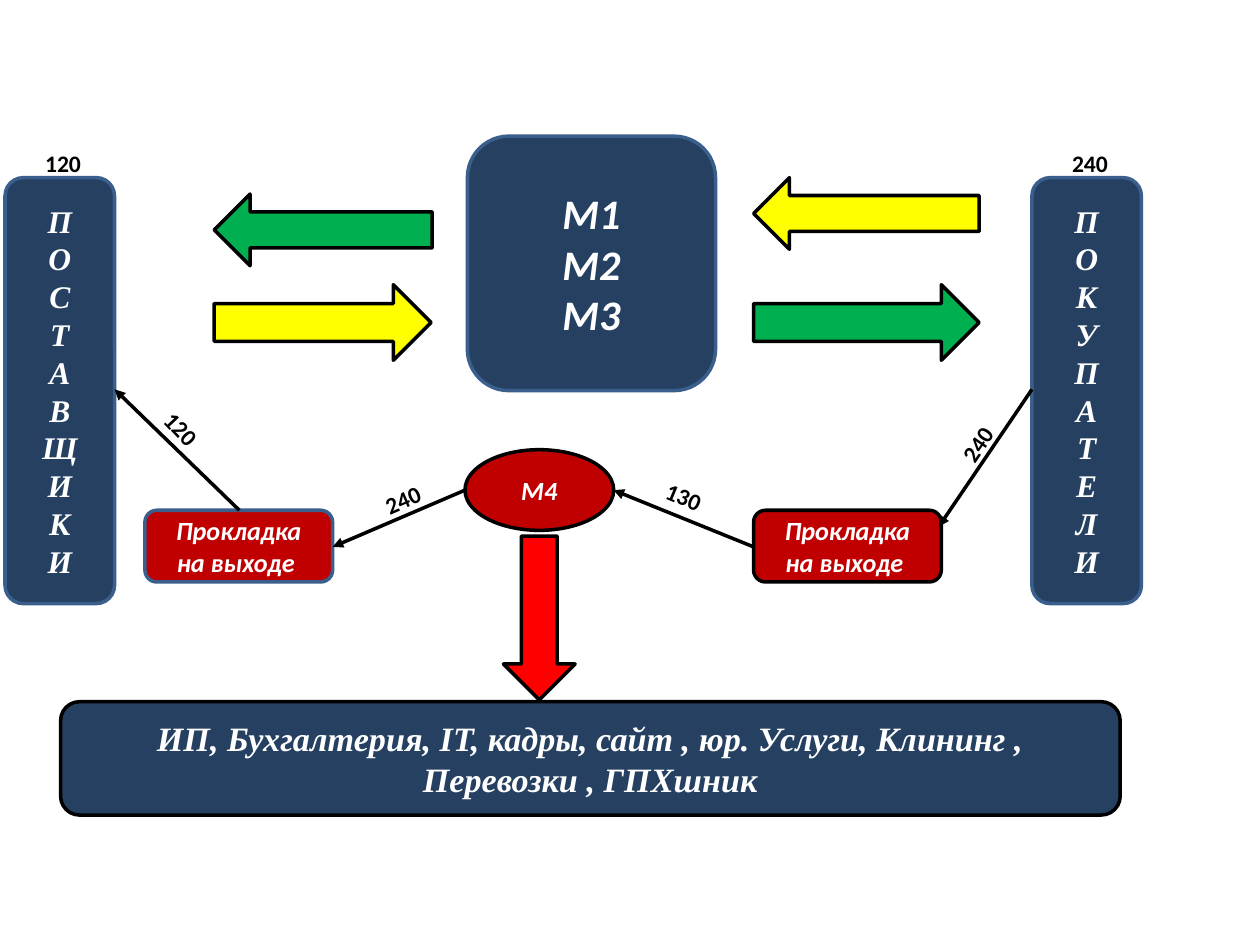
from lxml import etree
from pptx import Presentation
from pptx import util as u
from pptx.dml.color import RGBColor
from pptx.enum import shapes, text
from pptx.oxml.ns import qn

Pt = u.Pt
KIND = shapes.MSO_SHAPE
ROUND, LEFT, RIGHT = KIND.ROUNDED_RECTANGLE, KIND.LEFT_ARROW, KIND.RIGHT_ARROW
NAVY, EDGE, BLACK, WHITE = "254061", "3A5F8C", "000000", "FFFFFF"
CRIMSON, RED, GREEN, YELLOW = "C00000", "FF0000", "00B050", "FFFF00"
SERIF = "Times New Roman"


def color(code):
    return RGBColor.from_string(code)


def write(frame, words, size=15, font="Calibri", ink=WHITE, italic=True,
          align=text.PP_ALIGN.CENTER, anchor=text.MSO_ANCHOR.MIDDLE):
    frame.word_wrap = True
    frame.vertical_anchor = anchor
    frame.text = words
    for para in frame.paragraphs:
        para.alignment = align
        for run in para.runs:
            face = run.font
            face.size, face.name = Pt(size), font
            face.bold, face.italic = True, italic
            face.color.rgb = color(ink)


def block(slide, kind, x, y, w, h, fill, edge=BLACK, words="", turn=0, **style):
    box = slide.shapes.add_shape(kind, Pt(x), Pt(y), Pt(w), Pt(h))
    box.shadow.inherit = False
    box.rotation = turn
    box.fill.solid()
    box.fill.fore_color.rgb = color(fill)
    box.line.color.rgb = color(edge)
    box.line.width = Pt(2)
    if words:
        write(box.text_frame, words, **style)


def label(slide, words, x, y, turn=0):
    box = slide.shapes.add_textbox(Pt(x), Pt(y), Pt(46.8), Pt(23.8))
    box.rotation = turn
    write(box.text_frame, words, size=13.5, ink=BLACK, italic=False,
          align=text.PP_ALIGN.LEFT, anchor=text.MSO_ANCHOR.TOP)
    box.text_frame.auto_size = text.MSO_AUTO_SIZE.SHAPE_TO_FIT_TEXT


def link(slide, *ends):
    wire = slide.shapes.add_connector(
        shapes.MSO_CONNECTOR.STRAIGHT, *(Pt(end) for end in ends))
    wire.line.color.rgb = color(BLACK)
    wire.line.width = Pt(2)
    etree.SubElement(wire.line._get_or_add_ln(), qn("a:tailEnd"), type="triangle")
    etree.SubElement(wire._element.spPr, qn("a:effectLst"))


def main():
    deck = Presentation()
    deck.slide_width, deck.slide_height = Pt(720), Pt(540)
    slide = deck.slides.add_slide(deck.slide_layouts[6])

    # Central companies
    block(slide, ROUND, 267.1, 77.8, 141.8, 145.4, NAVY, EDGE,
          "М1\nМ2\nМ3", size=24)

    # Suppliers and buyers, one letter per line
    for x, word in ((2.9, "ПОСТАВЩИКИ"), (589.7, "ПОКУПАТЕЛИ")):
        block(slide, ROUND, x, 101.5, 62.6, 243.4, NAVY, EDGE,
              "\n".join(word), size=18, font=SERIF)

    # Flows of goods and money
    for kind, x, y, w, h, fill in (
            (LEFT, 122.4, 110.9, 124.6, 41, GREEN),
            (RIGHT, 122.4, 162.7, 124, 43.2, YELLOW),
            (LEFT, 430.6, 101.5, 128.9, 41, YELLOW),
            (RIGHT, 430.6, 162.7, 128.9, 43.2, GREEN)):
        block(slide, kind, x, y, w, h, fill)

    # Intermediaries around M4
    block(slide, KIND.OVAL, 265.7, 257, 85, 46.1, CRIMSON, words="М4")
    for x, edge in ((82.8, EDGE), (430.6, BLACK)):
        block(slide, ROUND, x, 291.6, 107.3, 41, CRIMSON, edge,
              "Прокладка на выходе ")

    # Chain from buyers back to suppliers
    for ends in ((589.7, 222.5, 536.4, 301), (430.6, 312.5, 350.6, 280.1),
                 (265.7, 280.1, 190.1, 312.5), (136.8, 291.6, 65.5, 222.5)):
        link(slide, *ends)

    # Amounts
    for words, x, y, turn in (
            ("120", 18.7, 81.4, 0), ("240", 605.5, 81.4, 0),
            ("120", 84.2, 237.6, 46.4), ("240", 212.4, 271.4, 336.8),
            ("130", 373, 274.3, 22.6), ("240", 538.6, 236.9, 304.3)):
        label(slide, words, x, y, turn)

    # Services paid from M4
    block(slide, LEFT, 261.4, 332.6, 93.6, 41, RED, turn=270)
    block(slide, ROUND, 34.6, 401, 605.5, 64.8, NAVY,
          words="ИП, Бухгалтерия, IT, кадры, сайт , юр. Услуги, Клининг , "
                "Перевозки , ГПХшник", size=19.5, font=SERIF)

    deck.save("out.pptx")


if __name__ == "__main__":
    main()
